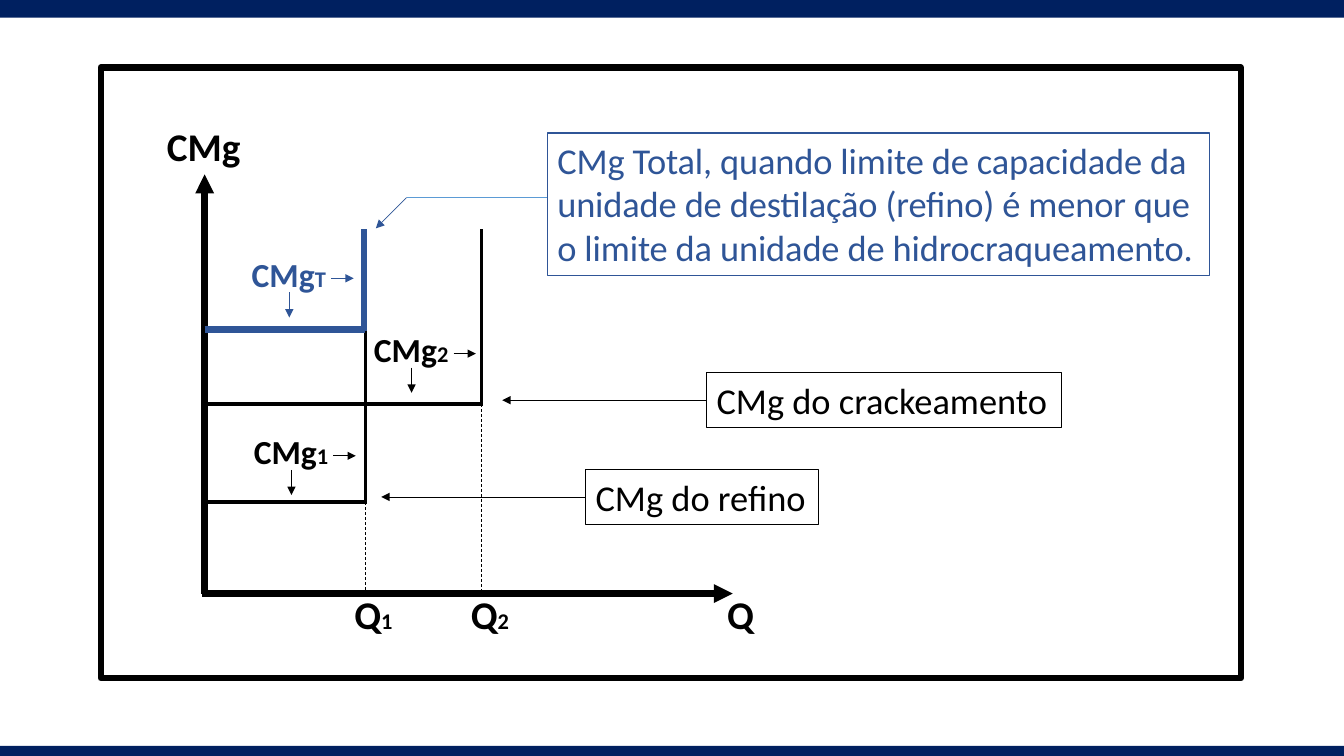
import pptx
import pptx.util
import pptx.dml.color
import pptx.enum.dml
import pptx.enum.shapes
import pptx.enum.text
import pptx.oxml.ns
import lxml.etree

Pt = pptx.util.Pt
BLACK = pptx.dml.color.RGBColor(0x00, 0x00, 0x00)
BLUE = pptx.dml.color.RGBColor(0x2F, 0x55, 0x97)
LIGHT_BLUE = pptx.dml.color.RGBColor(0x5B, 0x9B, 0xD5)
NAVY = pptx.dml.color.RGBColor(0x00, 0x20, 0x60)
PAGE_WIDTH, PAGE_HEIGHT = 960, 540
THIN, OUTLINE, CURVE, THICK = 0.5, 0.75, 2.25, 4.5


def add_rectangle(page, box, fill=None, line=None):
    """Draw a rectangle with an optional fill and thick outline."""
    shape = page.shapes.add_shape(
        pptx.enum.shapes.MSO_SHAPE.RECTANGLE, *[Pt(value) for value in box])
    shape.shadow.inherit = False
    if fill is None:
        shape.fill.background()
    else:
        shape.fill.solid()
        shape.fill.fore_color.rgb = fill
    if line is None:
        shape.line.fill.background()
    else:
        shape.line.color.rgb = line
        shape.line.width = Pt(THICK)


def add_line(page, start, end, width, color=BLACK, arrow=False, dashed=False):
    """Draw a straight line, optionally dashed or ending in an arrowhead."""
    line = page.shapes.add_connector(
        pptx.enum.shapes.MSO_CONNECTOR.STRAIGHT,
        *[Pt(value) for value in (*start, *end)])
    line.line.color.rgb = color
    line.line.width = Pt(width)
    if dashed:
        line.line.dash_style = pptx.enum.dml.MSO_LINE.DASH
    if arrow:
        lxml.etree.SubElement(
            line.line._get_or_add_ln(), pptx.oxml.ns.qn("a:tailEnd"), type="triangle")
    lxml.etree.SubElement(line._element.spPr, pptx.oxml.ns.qn("a:effectLst"))
    return line


def add_text(page, box, pieces, color=BLACK, bold=False, wrap=False):
    """Write one paragraph made of (text, size) pieces."""
    label = page.shapes.add_textbox(*[Pt(value) for value in box])
    frame_format = {"word_wrap": wrap,
                    "auto_size": pptx.enum.text.MSO_AUTO_SIZE.SHAPE_TO_FIT_TEXT}
    for name, value in frame_format.items():
        setattr(label.text_frame, name, value)
    para = label.text_frame.paragraphs[0]
    for text, size in pieces:
        span = para.add_run()
        span.text = text
        span.font.color.rgb = color
        for name, value in {"name": "Calibri", "size": Pt(size), "bold": bold}.items():
            setattr(span.font, name, value)
    return label


def add_callout(page, box, text, color=BLACK, wrap=True):
    """Write an outlined explanation."""
    callout = add_text(page, box, [(text, 26)], color, wrap=wrap)
    callout.line.color.rgb = color
    callout.line.width = Pt(OUTLINE)
    return callout


def add_bands(page, box):
    """Draw the bands along the top and bottom edges of the box."""
    left, top, width, height = box
    add_rectangle(page, (left, top, width, 12.6), NAVY)
    add_rectangle(page, (left, top + height - 7.2, width, 7.2), NAVY)


def add_axes(page, box):
    """Draw the two axes along the left and bottom of the box, with names."""
    left, top, width, height = box
    bottom = top + height
    add_line(page, (left, bottom), (left, top), THICK, arrow=True)
    add_line(page, (left - 2, bottom), (left + width, bottom), THICK, arrow=True)
    add_text(page, (left - 34, top - 41, 67.7, 41), [("CMg", 28)], bold=True)
    add_text(page, (left + width - 11, bottom - 5.7, 33.8, 41), [("Q", 28)], bold=True)


def add_curve(page, box, limit, level, width, color=BLACK):
    """Draw a cost curve: flat up to its capacity limit, then vertical."""
    left, top = box[:2]
    corner = (left + limit, top + level)
    add_line(page, (left, corner[1]), (corner[0] + 1, corner[1]), width, color)
    add_line(page, (corner[0], corner[1] + 1), (corner[0], top + 38.8), width, color)


def add_limit(page, box, limit, level, mark):
    """Drop a dashed line from a curve to the quantity axis and name it."""
    left, top, width, height = box
    across, bottom = left + limit, top + height
    add_line(page, (across, top + level), (across, bottom), THIN, dashed=True)
    add_text(page, (across - 15, bottom - 5.7, 42.5, 41), [("Q", 28), (mark, 16)],
             bold=True)


def add_curve_label(page, box, mark, color=BLACK):
    """Name a curve, with arrows to its vertical and its flat part."""
    left, top = box[:2]
    add_text(page, box, [("CMg", 24), (mark, 16)], color, bold=True)
    add_line(page, (left + 64, top + 21), (left + 80, top + 21), THIN, color, arrow=True)
    add_line(page, (left + 34, top + 31), (left + 34, top + 49), THIN, color, arrow=True)


def add_plot(page, box):
    """Draw the marginal cost plot inside the box."""
    left, top = box[:2]
    add_axes(page, box)
    for mark, limit, level in (("1", 114.8, 234), ("2", 198, 164)):
        add_curve(page, box, limit, level, CURVE)
        add_limit(page, box, limit, level, mark)
    add_curve(page, box, 113.8, 110.8, THICK, BLUE)
    for mark, across, down, color in (("1", 28, 180, BLACK), ("2", 113.8, 107, BLACK),
                                      ("T", 26.5, 53.2, BLUE)):
        add_curve_label(page, (left + across, top + down, 68.4, 36), mark, color)


def add_explanations(page, box):
    """Place the callouts and their pointers inside the frame box."""
    left, top = box[:2]
    for text, across, down, width, length, wrap in (
            ("CMg do refino", 346.3, 287.3, 166.3, 146, False),
            ("CMg do crackeamento", 432.7, 218.2, 253.4, 146, True)):
        callout = add_callout(page, (left + across, top + down, width, 38.9), text,
                              wrap=wrap)
        middle = top + down + 19.45
        pointer = add_line(page, (left + across, middle),
                           (left + across - length, middle), THIN, arrow=True)
        pointer.begin_connect(callout, 1)
    bend = (left + 218.5, top + 92.9)
    add_line(page, bend, (bend[0] - 22, bend[1] + 22), THIN, BLUE, arrow=True)
    add_line(page, bend, (left + 319, bend[1]), THIN, LIGHT_BLUE)
    total = add_callout(
        page, (left + 319, top + 46.8, 473, 101.5),
        "CMg Total, quando limite de capacidade da unidade de destilação (refino) "
        "é menor que o limite da unidade de hidrocraqueamento.", BLUE)
    total.text_frame.paragraphs[0].runs[0].font._element.set("spc", "-10")


def main():
    """Build and save the deck."""
    deck = pptx.Presentation()
    deck.slide_width, deck.slide_height = Pt(PAGE_WIDTH), Pt(PAGE_HEIGHT)
    page = deck.slides.add_slide(deck.slide_layouts[6])
    frame = (72, 48.2, 814.3, 436.3)
    add_bands(page, (0, 0, PAGE_WIDTH, PAGE_HEIGHT))
    add_plot(page, (frame[0] + 74.2, frame[1] + 76.4, 377.2, 299.4))
    add_explanations(page, frame)
    add_rectangle(page, frame, line=BLACK)
    deck.save("out.pptx")


if __name__ == "__main__":
    main()
